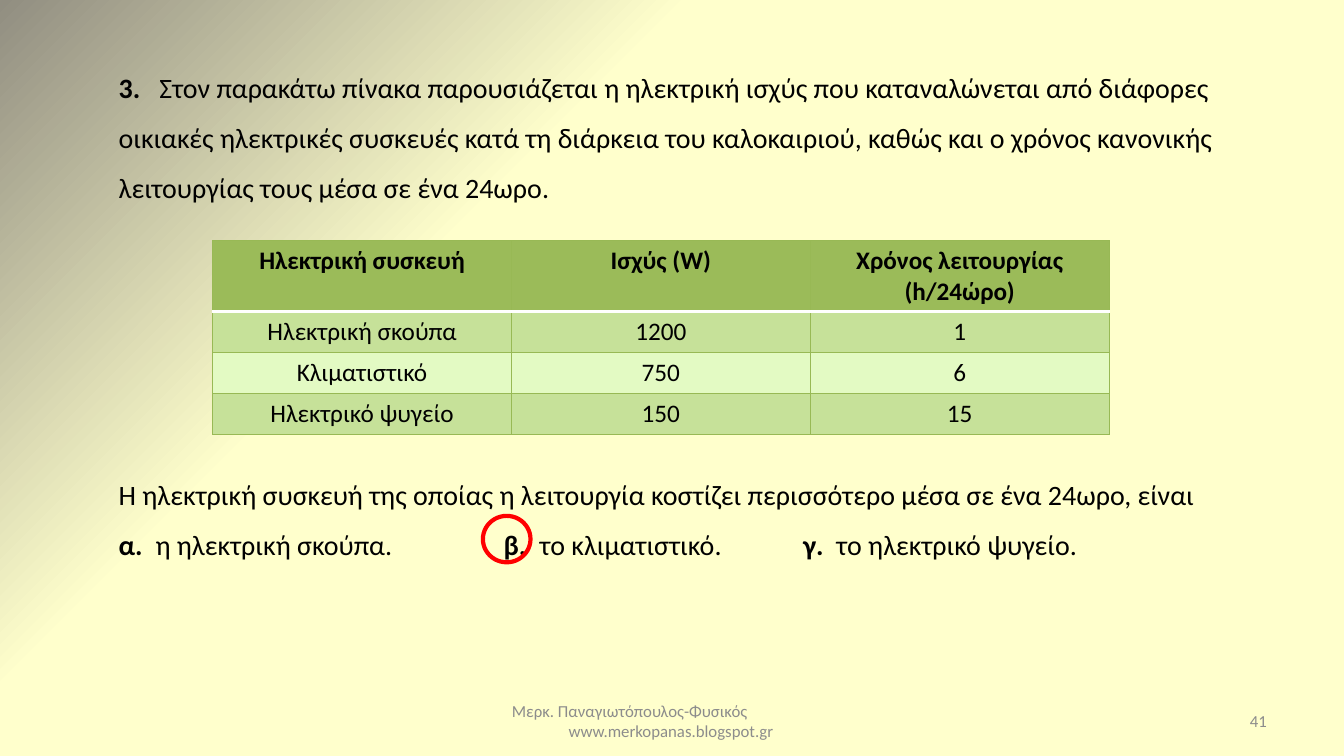
import pptx
import pptx.dml.color
import pptx.enum.shapes
import pptx.enum.text
import pptx.oxml
import pptx.oxml.ns
import pptx.util
from pptx.util import Cm

COLORS = {
    "cream": "FFFFCC",
    "taupe": "918E81",
    "text": "000000",
    "footer": "8C8C8C",
    "header": "9BBB59",
    "band": "C6E199",
    "plain": "E3FAC3",
    "grid": "98B955",
    "white": "FFFFFF",
    "mark": "FF0000",
}
FONT = "Calibri"
ALIGN = pptx.enum.text.PP_ALIGN
ANCHOR = pptx.enum.text.MSO_ANCHOR
NAMESPACE = pptx.oxml.ns.nsdecls("a")

QUESTION = (
    "Στον παρακάτω πίνακα παρουσιάζεται η ηλεκτρική ισχύς που καταναλώνεται από "
    "διάφορες οικιακές ηλεκτρικές συσκευές κατά τη διάρκεια του καλοκαιριού, καθώς "
    "και ο χρόνος κανονικής λειτουργίας τους μέσα σε ένα 24ωρο."
)
PROMPT = (
    "Η ηλεκτρική συσκευή της οποίας η λειτουργία κοστίζει περισσότερο "
    "μέσα σε ένα 24ωρο, είναι"
)
APPLIANCES = [
    ["Ηλεκτρική συσκευή", "Ισχύς (W)", "Χρόνος λειτουργίας (h/24ώρο)"],
    ["Ηλεκτρική σκούπα", "1200", "1"],
    ["Κλιματιστικό", "750", "6"],
    ["Ηλεκτρικό ψυγείο", "150", "15"],
]


def rgb(name):
    return pptx.dml.color.RGBColor.from_string(COLORS[name])


def set_background(slide):
    """Radial gradient centred on the bottom right corner."""
    slide.background.fill.gradient()
    gradient = next(slide.element.iter(pptx.oxml.ns.qn("a:gradFill")))
    stops = "".join(
        f'<a:gs pos="{position}"><a:srgbClr val="{COLORS[name]}"/></a:gs>'
        for position, name in ((67000, "cream"), (100000, "taupe"))
    )
    gradient.getparent().replace(gradient, pptx.oxml.parse_xml(
        f'<a:gradFill {NAMESPACE} rotWithShape="1"><a:gsLst>{stops}</a:gsLst>'
        '<a:path path="circle"><a:fillToRect l="100000" t="100000"/></a:path>'
        '</a:gradFill>'
    ))


def add_text_box(slide, left, top, width, height, anchor=ANCHOR.TOP):
    shape = slide.shapes.add_textbox(Cm(left), Cm(top), Cm(width), Cm(height))
    frame = shape.text_frame
    frame.word_wrap = True
    frame.vertical_anchor = anchor
    return frame


def add_run(paragraph, text, size, color="text", bold=False):
    run = paragraph.add_run()
    run.text = text
    run.font.name = FONT
    run.font.size = pptx.util.Pt(size)
    run.font.bold = bold
    run.font.color.rgb = rgb(color)


def set_tabs(paragraph, positions):
    tabs = "".join(f'<a:tab pos="{Cm(place)}" algn="l"/>' for place in positions)
    paragraph._p.get_or_add_pPr().append(
        pptx.oxml.parse_xml(f"<a:tabLst {NAMESPACE}>{tabs}</a:tabLst>"))


def add_exercise(slide):
    frame = add_text_box(slide, 2.74, 1.22, 28.55, 13.08)
    question = frame.paragraphs[0]
    prompt = frame.add_paragraph()
    answers = frame.add_paragraph()
    set_tabs(question, [1.03])
    set_tabs(answers, [0.93, 9.7, 10.61, 17.25, 18.09])
    for paragraph in frame.paragraphs:
        paragraph.line_spacing = 1.5
    # Room for the table
    prompt.space_before = pptx.util.Pt(183)

    add_run(question, "3.\t", 20, bold=True)
    add_run(question, QUESTION, 20)
    add_run(prompt, PROMPT, 20)
    for letter, answer in (
        ("α.\t", "η ηλεκτρική σκούπα.\t"),
        ("β.\t", "το κλιματιστικό.\t"),
        ("γ.\t", "το ηλεκτρικό ψυγείο."),
    ):
        add_run(answers, letter, 20, bold=True)
        add_run(answers, answer, 20)


def set_border(cell, side, color, width):
    cell._tc.get_or_add_tcPr().append(pptx.oxml.parse_xml(
        f'<a:ln{side} {NAMESPACE} w="{pptx.util.Pt(width)}"><a:solidFill>'
        f'<a:srgbClr val="{COLORS[color]}"/></a:solidFill></a:ln{side}>'
    ))


def add_appliance_table(slide):
    shape = slide.shapes.add_table(
        len(APPLIANCES), 3, Cm(5.36), Cm(6.07), Cm(22.58), Cm(4.9))
    table = shape.table
    for column in table.columns:
        column.width = Cm(7.53)
    for row_index, texts in enumerate(APPLIANCES):
        is_header = row_index == 0
        table.rows[row_index].height = Cm(1.78 if is_header else 1.03)
        fill = "header" if is_header else ("plain", "band")[row_index % 2]
        for column_index, text in enumerate(texts):
            cell = table.cell(row_index, column_index)
            for side in "LRTB":
                if (is_header and side == "B") or (row_index == 1 and side == "T"):
                    set_border(cell, side, "white", 2)
                else:
                    set_border(cell, side, "grid", 0.75)
            cell.fill.solid()
            cell.fill.fore_color.rgb = rgb(fill)
            paragraph = cell.text_frame.paragraphs[0]
            paragraph.alignment = ALIGN.CENTER
            add_run(paragraph, text, 18, bold=is_header)


def add_answer_mark(slide):
    shape = slide.shapes.add_shape(
        pptx.enum.shapes.MSO_SHAPE.OVAL, Cm(12.17), Cm(13), Cm(1.2), Cm(1.17))
    shape.shadow.inherit = False
    shape.fill.background()
    shape.line.color.rgb = rgb("mark")
    shape.line.width = pptx.util.Pt(3)


def add_footer(slide):
    credit = add_text_box(slide, 11.58, 17.65, 10.72, 1.02, ANCHOR.MIDDLE)
    credit.add_paragraph()
    lines = (
        ("Μερκ. Παναγιωτόπουλος-Φυσικός", 1.07),
        ("www.merkopanas.blogspot.gr", 2.5),
    )
    for paragraph, (text, indent) in zip(credit.paragraphs, lines):
        paragraph._p.get_or_add_pPr().set("marL", str(Cm(indent)))
        add_run(paragraph, text, 12, "footer")

    number = add_text_box(slide, 24.28, 17.65, 7.9, 1.02, ANCHOR.MIDDLE)
    number.paragraphs[0].alignment = ALIGN.RIGHT
    add_run(number.paragraphs[0], "41", 12, "footer")


def main():
    presentation = pptx.Presentation()
    presentation.slide_width = Cm(33.87)
    presentation.slide_height = Cm(19.05)
    slide = presentation.slides.add_slide(presentation.slide_layouts[6])

    set_background(slide)
    add_footer(slide)
    add_exercise(slide)
    add_appliance_table(slide)
    add_answer_mark(slide)
    presentation.save("out.pptx")


if __name__ == "__main__":
    main()
